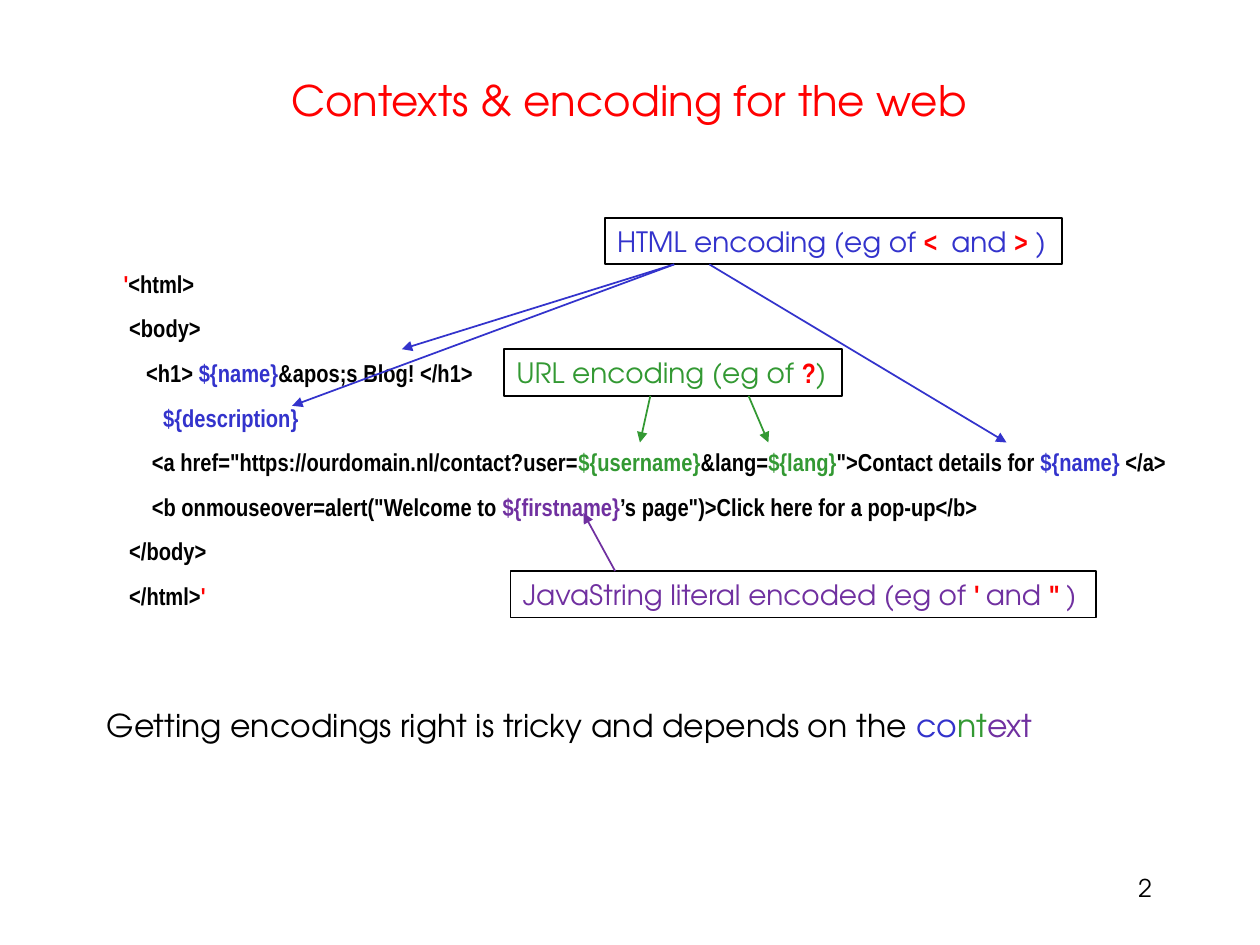
from lxml.etree import SubElement
from pptx import Presentation
from pptx.dml.color import RGBColor
from pptx.enum.shapes import MSO_CONNECTOR, MSO_SHAPE
from pptx.enum.text import MSO_ANCHOR, PP_ALIGN
from pptx.oxml.ns import qn
from pptx.util import Cm, Pt

SANS, CODE = "TeX Gyre Adventor", "Arial Narrow"
RED, BLACK = "FF0000", "000000"
BLUE, GREEN, PURPLE = "3333CC", "339933", "7030A0"
SPACE = 0.114

LINES = [
    (3, [("'", RED), ("<html>", BLACK)]),
    (4, [("<body>", BLACK)]),
    (7, [("<h1> ", BLACK), ("${name}", BLUE), ("&apos;s Blog! </h1>", BLACK)]),
    (10, [("${description}", BLUE)]),
    (8, [('<a href="https://ourdomain.nl/contact?user=', BLACK),
         ("${username}", GREEN), ("&lang=", BLACK), ("${lang}", GREEN),
         ('">Contact details for ', BLACK), ("${name} ", BLUE),
         ("</a>", BLACK)]),
    (8, [('<b onmouseover=alert("Welcome to ', BLACK),
         ("${firstname}", PURPLE),
         ("’s page\")>Click here for a pop-up</b>", BLACK)]),
    (4, [("</body>", BLACK)]),
    (4, [("</html>", BLACK), ("'", RED)]),
]

NOTES = [
    ((12.19, 4.39, 9.22, 0.94), BLUE,
     ["HTML encoding (eg of ", "< ", " and ", ">", " )"],
     [((1.4, 0.94), (-4.09, 2.65)), ((1.4, 0.94), (-6.3, 3.79)),
      ((2.11, 0.94), (8.1, 4.53))]),
    ((10.16, 7.04, 6.81, 0.94), GREEN,
     ["URL encoding (eg of ", "?", ")"],
     [((2.95, 0.94), (2.74, 1.88)), ((4.93, 0.94), (5.33, 1.88))]),
    ((10.29, 11.51, 11.81, 0.94), PURPLE,
     ["JavaString literal encoded (eg of ", "' ", "and ", '" ', ")"],
     [((2.11, 0), (1.47, -1.17))]),
]


def paint(code):
    """Turn a hex string into a colour."""
    return RGBColor.from_string(code)


def write(para, parts, size, font=SANS, bold=False):
    """Fill a paragraph with coloured runs in one style."""
    for text, color in parts:
        run = para.add_run()
        run.text = text
        run.font.name = font
        run.font.size = Pt(size)
        run.font.bold = bold
        run.font.color.rgb = paint(color)


def add_text(slide, box):
    """Add a wrapping text box and return its text frame."""
    frame = slide.shapes.add_textbox(*map(Cm, box)).text_frame
    frame.word_wrap = True
    return frame


def add_line(slide, box, parts, size, align=PP_ALIGN.LEFT):
    """Place one line of text in the middle of the box."""
    frame = add_text(slide, box)
    frame.vertical_anchor = MSO_ANCHOR.MIDDLE
    para = frame.paragraphs[0]
    para.alignment = align
    write(para, parts, size)
    return para


def add_code(slide, box):
    """List the markup, each line indented by its count of spaces."""
    frame = add_text(slide, box)
    for num, (depth, parts) in enumerate(LINES):
        para = frame.add_paragraph() if num else frame.paragraphs[0]
        para.line_spacing = 1.16
        para.space_before = Pt(6 if num else 0)
        para._p.get_or_add_pPr().set("marL", str(Cm(depth * SPACE)))
        write(para, parts, 14, CODE, True)


def add_arrow(slide, start, end, color):
    """Draw a thin arrow with a triangle head at its end."""
    arrow = slide.shapes.add_connector(
        MSO_CONNECTOR.STRAIGHT, *map(Cm, (*start, *end)))
    arrow.line.width = Pt(1)
    arrow.line.color.rgb = paint(color)
    SubElement(arrow.line._get_or_add_ln(), qn("a:tailEnd"), type="triangle")
    SubElement(arrow._element.spPr, qn("a:effectLst"))


def add_note(slide, box, color, texts, arrows):
    """Draw a framed note, symbols in red, with arrows from its edge."""
    left, top = box[:2]
    shape = slide.shapes.add_shape(MSO_SHAPE.RECTANGLE, *map(Cm, box))
    shape.shadow.inherit = False
    shape.fill.background()
    shape.line.width = Pt(1)
    shape.line.color.rgb = paint(BLACK)
    para = shape.text_frame.paragraphs[0]
    para.alignment = PP_ALIGN.LEFT
    for num, text in enumerate(texts):
        if num % 2:
            write(para, [(text, RED)], 16, CODE, True)
        else:
            write(para, [(text, color)], 16)
    for start, end in arrows:
        add_arrow(slide, (left + start[0], top + start[1]),
                  (left + end[0], top + end[1]), color)


def main():
    """Build the slide and save it."""
    deck = Presentation()
    deck.slide_width, deck.slide_height = Cm(25.4), Cm(19.05)
    slide = deck.slides.add_slide(deck.slide_layouts[6])
    title = add_line(slide, (1.9, 0.76, 21.56, 2.34),
                     [("Contexts & encoding for the web", RED)], 24,
                     PP_ALIGN.CENTER)
    title.line_spacing = 1.16
    add_code(slide, (1.9, 5.2, 22, 7.5))
    add_line(slide, (1.9, 14.1, 22, 1.02),
             [("Getting encodings right is tricky and depends on the ", BLACK),
              ("co", BLUE), ("nt", GREEN), ("ext", PURPLE)], 18)
    for note in NOTES:
        add_note(slide, *note)
    add_line(slide, (18.21, 17.35, 5.26, 1.1), [("2", BLACK)], 14,
             PP_ALIGN.RIGHT)
    deck.save("out.pptx")


if __name__ == "__main__":
    main()
